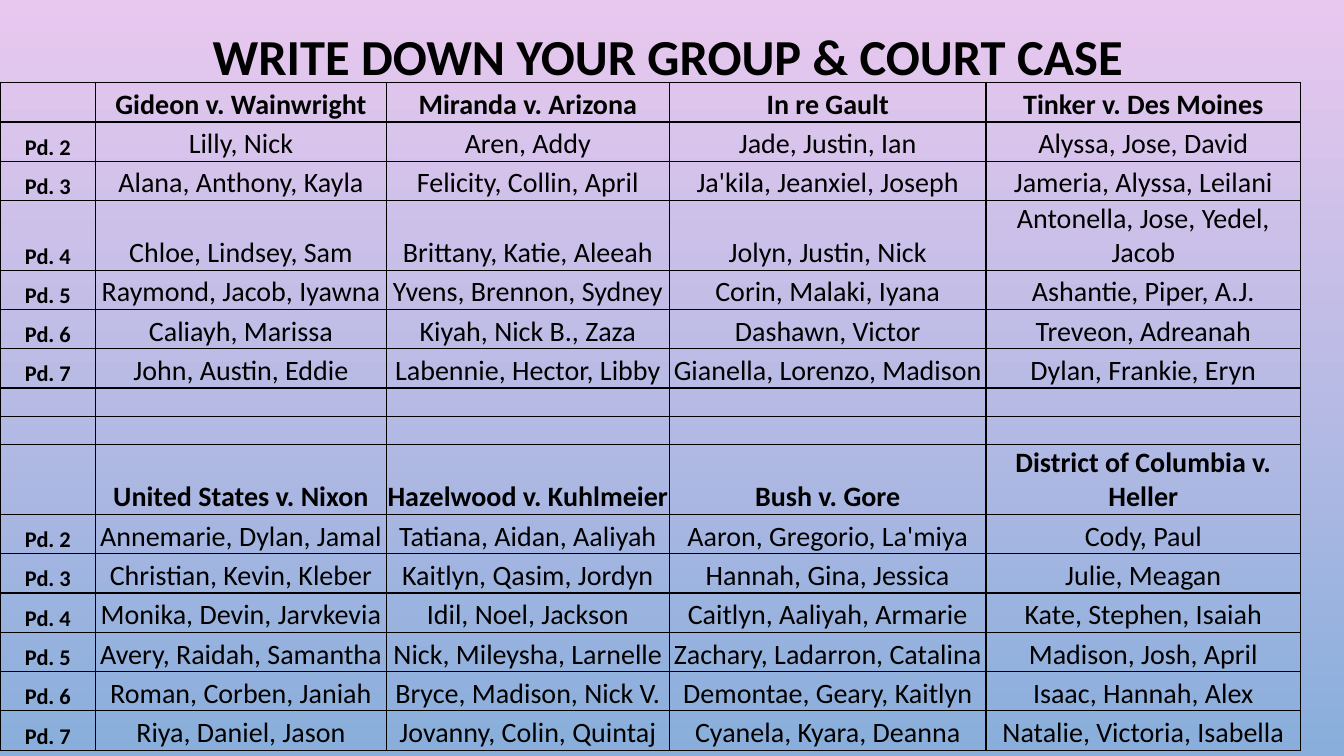
from dataclasses import dataclass

from lxml import etree
from pptx import Presentation
from pptx import util as u
from pptx.dml import color
from pptx.enum import text
from pptx.oxml import ns

COLORS = {"black": "000000", "sky_top": "E9C8EF", "sky_bottom": "89AEDB"}
FONT = "Calibri"
COLUMN_WIDTHS = (0.95, 2.88, 2.81, 3.14, 3.12)
ROW_HEIGHT = 0.39
SPACER_HEIGHTS = (0.07, 0.12)


@dataclass(frozen=True)
class CaseBlock:
    cases: tuple[str, ...]
    groups: dict[str, tuple[str, ...]]


FIRST_CASES = CaseBlock(
    ("Gideon v. Wainwright", "Miranda v. Arizona", "In re Gault", "Tinker v. Des Moines"),
    {
        "Pd. 2": ("Lilly, Nick", "Aren, Addy", "Jade, Justin, Ian", "Alyssa, Jose, David"),
        "Pd. 3": ("Alana, Anthony, Kayla", "Felicity, Collin, April",
                  "Ja'kila, Jeanxiel, Joseph", "Jameria, Alyssa, Leilani"),
        "Pd. 4": ("Chloe, Lindsey, Sam", "Brittany, Katie, Aleeah",
                  "Jolyn, Justin, Nick", "Antonella, Jose, Yedel, Jacob"),
        "Pd. 5": ("Raymond, Jacob, Iyawna", "Yvens, Brennon, Sydney",
                  "Corin, Malaki, Iyana", "Ashantie, Piper, A.J."),
        "Pd. 6": ("Caliayh, Marissa", "Kiyah, Nick B., Zaza",
                  "Dashawn, Victor", "Treveon, Adreanah"),
        "Pd. 7": ("John, Austin, Eddie", "Labennie, Hector, Libby",
                  "Gianella, Lorenzo, Madison", "Dylan, Frankie, Eryn"),
    },
)
SECOND_CASES = CaseBlock(
    ("United States v. Nixon", "Hazelwood v. Kuhlmeier", "Bush v. Gore",
     "District of Columbia v. Heller"),
    {
        "Pd. 2": ("Annemarie, Dylan, Jamal", "Tatiana, Aidan, Aaliyah",
                  "Aaron, Gregorio, La'miya", "Cody, Paul"),
        "Pd. 3": ("Christian, Kevin, Kleber", "Kaitlyn, Qasim, Jordyn",
                  "Hannah, Gina, Jessica", "Julie, Meagan"),
        "Pd. 4": ("Monika, Devin, Jarvkevia", "Idil, Noel, Jackson",
                  "Caitlyn, Aaliyah, Armarie", "Kate, Stephen, Isaiah"),
        "Pd. 5": ("Avery, Raidah, Samantha", "Nick, Mileysha, Larnelle",
                  "Zachary, Ladarron, Catalina", "Madison, Josh, April"),
        "Pd. 6": ("Roman, Corben, Janiah", "Bryce, Madison, Nick V.",
                  "Demontae, Geary, Kaitlyn", "Isaac, Hannah, Alex"),
        "Pd. 7": ("Riya, Daniel, Jason", "Jovanny, Colin, Quintaj",
                  "Cyanela, Kyara, Deanna", "Natalie, Victoria, Isabella"),
    },
)


def write_text(paragraph, content: str, *, size: float, bold: bool = False) -> None:
    paragraph.alignment = text.PP_ALIGN.CENTER
    if not content:
        properties = etree.SubElement(paragraph._p, ns.qn("a:endParaRPr"))
        properties.set("sz", str(size * 100))
        return
    run = paragraph.add_run()
    run.text = content
    run.font.name = FONT
    run.font.size = u.Pt(size)
    run.font.bold = bold
    run.font.color.rgb = color.RGBColor.from_string(COLORS["black"])


def add_borders(cell) -> None:
    properties = cell._tc.get_or_add_tcPr()
    for position, side in enumerate(("lnL", "lnR", "lnT", "lnB")):
        line = etree.Element(ns.qn(f"a:{side}"), w=str(u.Pt(1)))
        fill = etree.SubElement(line, ns.qn("a:solidFill"))
        etree.SubElement(fill, ns.qn("a:srgbClr"), val=COLORS["black"])
        properties.insert(position, line)


def format_cell(cell, content: str, *, size: float, bold: bool) -> None:
    cell.margin_left = cell.margin_right = cell.margin_top = u.Inches(0.01)
    cell.margin_bottom = u.Inches(0)
    cell.vertical_anchor = text.MSO_ANCHOR.BOTTOM
    cell.fill.background()
    add_borders(cell)
    write_text(cell.text_frame.paragraphs[0], content, size=size, bold=bold)


def block_rows(block: CaseBlock) -> list[tuple[str, ...]]:
    return [("", *block.cases)] + [(period, *names) for period, names in block.groups.items()]


def add_group_table(slide) -> None:
    first_rows = block_rows(FIRST_CASES)
    spacer_rows = [("",) * len(COLUMN_WIDTHS) for _ in SPACER_HEIGHTS]
    second_rows = block_rows(SECOND_CASES)
    rows = first_rows + spacer_rows + second_rows
    heights = ([ROW_HEIGHT] * len(first_rows) + list(SPACER_HEIGHTS)
               + [ROW_HEIGHT] * len(second_rows))
    frame = slide.shapes.add_table(
        len(rows), len(COLUMN_WIDTHS), u.Inches(0), u.Inches(0.82), u.Inches(12.9), u.Inches(6.58))
    table = frame.table
    table.first_row = table.horz_banding = False
    for column, width in zip(table.columns, COLUMN_WIDTHS):
        column.width = u.Inches(width)
    for row, height, contents in zip(table.rows, heights, rows):
        row.height = u.Inches(height)
        is_header = not contents[0]
        for index, (cell, content) in enumerate(zip(row.cells, contents)):
            is_period = index == 0
            size = 16 if is_period or not content else 20
            format_cell(cell, content, size=size, bold=is_header or is_period)
    frame.height = u.Inches(6.58)


def set_background(slide) -> None:
    fill = slide.background.fill
    fill.gradient()
    fill.gradient_angle = 270
    for stop, position, name in zip(fill.gradient_stops, (0, 1), ("sky_top", "sky_bottom")):
        stop.position = position
        stop.color.rgb = color.RGBColor.from_string(COLORS[name])


def add_title(slide) -> None:
    title = slide.shapes.title
    title.left, title.top = u.Inches(0.96), u.Inches(0.12)
    title.width, title.height = u.Inches(11.33), u.Inches(0.93)
    title.text_frame.vertical_anchor = text.MSO_ANCHOR.MIDDLE
    paragraph = title.text_frame.paragraphs[0]
    paragraph.line_spacing = 0.9
    write_text(paragraph, "WRITE DOWN YOUR GROUP & COURT CASE", size=36, bold=True)


def main() -> None:
    presentation = Presentation()
    presentation.slide_width = u.Inches(13.33)
    presentation.slide_height = u.Inches(7.5)
    slide = presentation.slides.add_slide(presentation.slide_layouts[5])
    set_background(slide)
    add_title(slide)
    add_group_table(slide)
    presentation.save("out.pptx")


if __name__ == "__main__":
    main()
